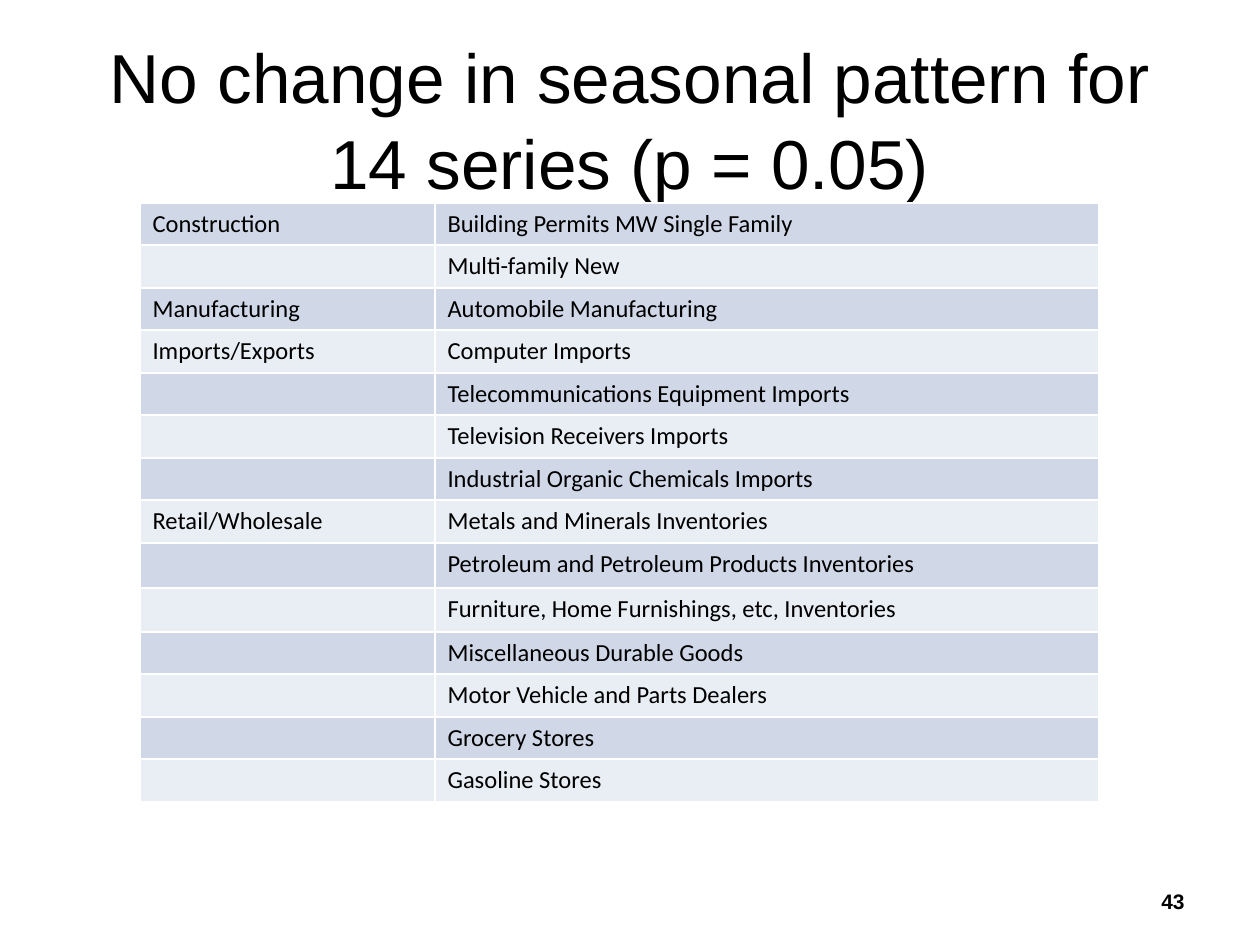
from lxml.etree import SubElement
from pptx import Presentation
from pptx.dml.color import RGBColor
from pptx.enum.text import MSO_ANCHOR as Anchor, PP_ALIGN as Align
from pptx.oxml.ns import qn
from pptx.util import Pt

PX = 914400 // 126  # EMU in one px
BLACK = RGBColor(0x00, 0x00, 0x00)
WHITE = RGBColor(0xFF, 0xFF, 0xFF)
BANDS = [RGBColor(0xD0, 0xD8, 0xE8), RGBColor(0xE9, 0xED, 0xF4)]

GROUPS = [
    ("Construction", ["Building Permits MW Single Family", "Multi-family New"]),
    ("Manufacturing", ["Automobile Manufacturing"]),
    ("Imports/Exports", [
        "Computer Imports",
        "Telecommunications Equipment Imports",
        "Television Receivers Imports",
        "Industrial Organic Chemicals Imports",
    ]),
    ("Retail/Wholesale", [
        "Metals and Minerals Inventories",
        "Petroleum and Petroleum Products Inventories",
        "Furniture, Home Furnishings, etc, Inventories",
        "Miscellaneous Durable Goods",
        "Motor Vehicle and Parts Dealers",
        "Grocery Stores",
        "Gasoline Stores",
    ]),
]
COLUMNS = [295, 664]
ROWS = [42, 43] * 4 + [45, 44] + [42, 43] * 2


class Deck:
    heading_font = "Arial"
    table_font = "Calibri"
    table_size = 14

    def __init__(self, width, height):
        self.prs = Presentation()
        self.prs.slide_width = width * PX
        self.prs.slide_height = height * PX
        self.slide = self.prs.slides.add_slide(self.prs.slide_layouts[6])

    def run(self, p, text, font, size, bold=False):
        r = p.add_run()
        r.text = text
        r.font.name = font
        r.font.size = Pt(size)
        r.font.bold = bold
        r.font.color.rgb = BLACK

    def text(self, box, text, size, align, bold=False, spacing=1.0):
        sp = self.slide.shapes.add_textbox(*(n * PX for n in box))
        tf = sp.text_frame
        tf.word_wrap = True
        tf.vertical_anchor = Anchor.MIDDLE
        p = tf.paragraphs[0]
        p.alignment = align
        p.line_spacing = spacing
        self.run(p, text, self.heading_font, size, bold)

    def borders(self, cell):
        tc_pr = cell._tc.get_or_add_tcPr()
        for i, side in enumerate(("lnL", "lnR", "lnT", "lnB")):
            ln = SubElement(tc_pr, qn(f"a:{side}"), w=str(Pt(1)))
            fill = SubElement(ln, qn("a:solidFill"))
            SubElement(fill, qn("a:srgbClr"), val=str(WHITE))
            tc_pr.insert(i, ln)

    def cell(self, cell, text, color):
        cell.fill.solid()
        cell.fill.fore_color.rgb = color
        self.borders(cell)
        p = cell.text_frame.paragraphs[0]
        if text:
            self.run(p, text, self.table_font, self.table_size)
        else:  # keeps an empty cell from stretching its row
            p._p.get_or_add_endParaRPr().set("sz", str(self.table_size * 100))

    def table(self, left, top, columns, heights, rows):
        frame = self.slide.shapes.add_table(
            len(rows), len(columns), left * PX, top * PX,
            sum(columns) * PX, sum(heights) * PX)
        table = frame.table
        table.first_row = False
        for column, width in zip(table.columns, columns):
            column.width = width * PX
        for i, (height, texts) in enumerate(zip(heights, rows)):
            table.rows[i].height = height * PX
            for j, text in enumerate(texts):
                self.cell(table.cell(i, j), text, BANDS[i % 2])


def main():
    deck = Deck(1260, 945)

    # Title
    deck.text((63, 38, 1134, 158),
              "No change in seasonal pattern for 14 series (p = 0.05)",
              39.6, Align.CENTER, spacing=1.04)

    # Series by sector, the sector named on its first row only
    rows = [(sector if i == 0 else "", name)
            for sector, names in GROUPS for i, name in enumerate(names)]
    deck.table(140, 203, COLUMNS, ROWS, rows)

    # Page number
    deck.text((903, 876, 294, 50), "43", 12, Align.RIGHT, bold=True)

    deck.prs.save("out.pptx")


if __name__ == "__main__":
    main()
